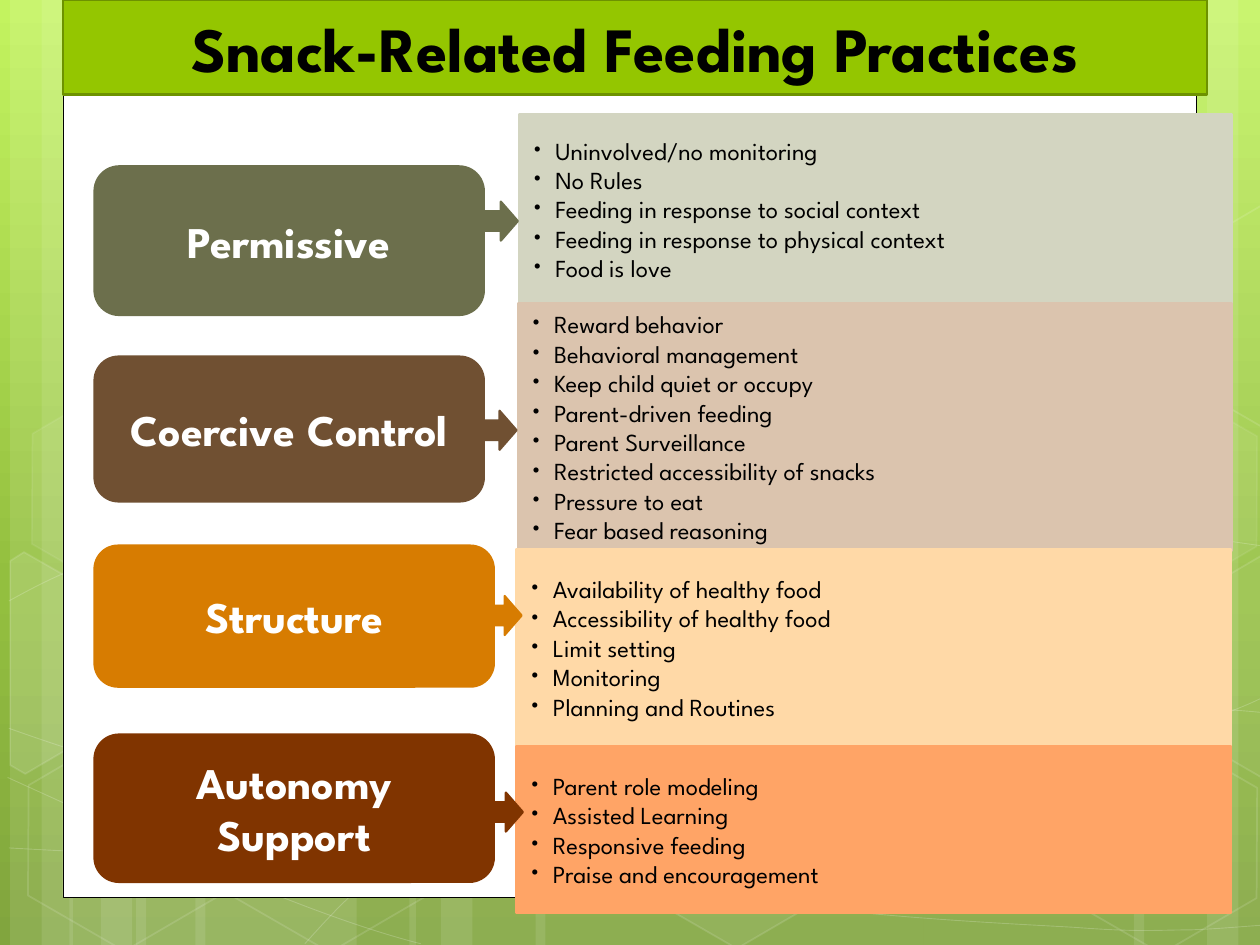
import copy
import dataclasses
import math

import pptx
import pptx.dml.color
import pptx.enum.shapes
import pptx.enum.text
import pptx.oxml.ns
import pptx.util
from pptx.util import Inches

SHAPE = pptx.enum.shapes.MSO_SHAPE
ALIGN = pptx.enum.text.PP_ALIGN
ANCHOR = pptx.enum.text.MSO_ANCHOR
qn = pptx.oxml.ns.qn


@dataclasses.dataclass(frozen=True)
class Theme:
    font: str = "League Spartan"
    white: str = "FFFFFF"
    black: str = "000000"
    banner: str = "94C600"
    banner_edge: str = "6D9200"
    backdrop: tuple = ((0, "C3F35F"), (0.62, "93BF3F"), (1, "81A53E"))
    title_size: int = 36
    label_size: int = 25
    item_size: int = 14
    edge: float = 1.25
    tilt: int = 30


THEME = Theme()

# Label, dark and light colour, label box, arrow position, list box, items
PRACTICES = [
    ("Permissive", "6C6F4C", "D3D5C1",
     (0.75, 1.32, 3.09, 1.18), (3.84, 1.6), (4.12, 0.91, 5.66, 1.5),
     ["Uninvolved/no monitoring", "No Rules", "Feeding in response to social context",
      "Feeding in response to physical context", "Food is love"]),
    ("Coercive Control", "705032", "DBC4AE",
     (0.75, 2.83, 3.09, 1.15), (3.83, 3.26), (4.11, 2.41, 5.67, 1.96),
     ["Reward behavior", "Behavioral management", "Keep child quiet or occupy",
      "Parent-driven feeding", "Parent Surveillance",
      "Restricted accessibility of snacks", "Pressure to eat", "Fear based reasoning"]),
    ("Structure", "D77C01", "FFD9A7",
     (0.75, 4.33, 3.17, 1.12), (3.87, 4.73), (4.1, 4.36, 5.67, 1.56),
     ["Availability of healthy food", "Accessibility of healthy food",
      "Limit setting", "Monitoring", "Planning and Routines"]),
    ("Autonomy Support", "803400", "FFA466",
     (0.75, 5.83, 3.17, 1.17), (3.88, 6.29), (4.1, 5.92, 5.67, 1.33),
     ["Parent role modeling", "Assisted Learning", "Responsive feeding",
      "Praise and encouragement"]),
]

# Left and width of each full-height light stripe
STRIPES = [(1.08, 1.75), (0.08, 0.5), (0.33, 0.83), (1.55, 1.75), (0.55, 0.5),
           (0.8, 0.83), (7.33, 1.75), (9.58, 0.5), (9, 0.83), (4.25, 3.08),
           (3.25, 0.5), (3.5, 0.83)]

# Start point, then two control points and an end point for each segment
CURVES = [
    [(0.07, 6.73), (0.61, 6.76), (1.15, 6.79), (1.9, 6.78), (2.65, 6.77), (3.58, 6.75),
     (4.58, 6.65), (5.58, 6.55), (7, 6.36), (7.92, 6.17), (8.83, 5.98), (9.77, 5.68),
     (10.07, 5.51)],
    [(0.07, 4.77), (0.36, 4.61), (0.65, 4.46), (1.21, 4.31), (1.78, 4.16), (2.59, 3.94),
     (3.47, 3.87), (4.36, 3.8), (5.44, 3.79), (6.54, 3.87), (7.64, 3.95), (9.47, 4.26),
     (10.07, 4.34)],
    [(0.06, 6.17), (1.27, 6.72), (2.47, 7.27), (3.34, 7.49)],
    [(0.07, 5.78), (0.38, 5.89), (0.7, 6), (1.28, 6.16), (1.86, 6.31), (2.73, 6.56),
     (3.57, 6.73), (4.4, 6.9), (5.45, 7.08), (6.28, 7.18), (7.11, 7.29), (8, 7.33),
     (8.53, 7.36), (9.05, 7.4), (9.19, 7.38), (9.45, 7.38), (9.71, 7.37), (9.89, 7.35),
     (10.07, 7.34)],
    [(2.42, 7.49), (2.6, 7.29), (2.78, 7.09), (3.02, 6.91), (3.26, 6.73), (3.6, 6.53),
     (3.88, 6.39), (4.16, 6.25), (4.33, 6.19), (4.7, 6.09), (5.06, 5.99), (5.73, 5.85),
     (6.08, 5.78), (6.44, 5.71), (6.49, 5.71), (6.8, 5.69), (7.11, 5.66), (7.6, 5.63),
     (7.94, 5.62), (8.29, 5.61), (8.86, 5.62), (8.86, 5.62), (9.08, 5.62), (9.31, 5.62),
     (9.53, 5.62), (9.71, 5.63), (9.88, 5.64), (10.06, 5.66)],
]

# Left, top, fill opacity and line opacity in percent
HEXAGONS = [(3.34, 0.36, 4, 8), (4.97, 5.89, 6, 12), (0.11, 5.91, 0, 12),
            (0.14, 3.12, 7, 8), (1.74, 5.92, 0, 12), (7.53, 4.53, 10, 12),
            (8.34, 5.93, 0, 12), (8.34, 3.14, 7, 8)]

# Corners, centre and fill opacity of the hexagons cut by the slide edge
CUT_HEXAGONS = [
    ([(0.08, 4.45), (0.19, 4.38), (0.96, 4.82), (0.95, 5.7), (0.2, 6.14), (0.08, 6.07)],
     (0.36, 5.35), 10),
    ([(9.26, 4.85), (10.01, 4.41), (10.09, 4.46), (10.09, 6.13), (10.02, 6.17),
      (9.26, 5.73)], (9.85, 5.2), 4),
    ([(9.26, 2.07), (10.01, 1.63), (10.1, 1.68), (10.09, 3.35), (10.02, 3.39),
      (9.26, 2.95)], (9.85, 2.41), 0),
]


def apply(target, formats):
    for name, value in formats.items():
        setattr(target, name, value)


def paint(fill, color, opacity=100):
    """Fill with a colour, or with nothing when it is fully transparent."""
    if not opacity:
        fill.background()
        return
    fill.solid()
    fill.fore_color.rgb = pptx.dml.color.RGBColor.from_string(color)
    if opacity < 100:
        for node in fill._xPr.iter(qn("a:srgbClr")):
            if node.getparent().getparent() is fill._xPr:
                alpha = node.makeelement(qn("a:alpha"), {"val": str(opacity * 1000)})
                node.append(alpha)


def style(shape, fill, line=None, width=0, fill_opacity=100, line_opacity=100):
    shape.shadow.inherit = False
    paint(shape.fill, fill, fill_opacity)
    paint(shape.line.fill, line, line_opacity if line else 0)
    if line:
        shape.line.width = pptx.util.Pt(width)


def add_box(slide, kind, area, *look):
    box = slide.shapes.add_shape(kind, *map(Inches, area))
    style(box, *look)
    return box


def add_outline(slide, points, closed, *look):
    points = [tuple(map(Inches, point)) for point in points]
    builder = slide.shapes.build_freeform(*points[0])
    builder.add_line_segments(points[1:], close=closed)
    outline = builder.convert_to_shape()
    style(outline, *look)
    return outline


def bend(outline):
    """Turn each three line segments into one cubic curve."""
    lines = list(outline._element.iter(qn("a:lnTo")))
    for start in range(0, len(lines), 3):
        curve = lines[start].makeelement(qn("a:cubicBezTo"), {})
        lines[start].addprevious(curve)
        for line in lines[start:start + 3]:
            curve.append(line[0])
            line.getparent().remove(line)


def turn(point, center, degrees):
    angle = math.radians(degrees)
    x, y = point[0] - center[0], point[1] - center[1]
    return (center[0] + x * math.cos(angle) - y * math.sin(angle),
            center[1] + x * math.sin(angle) + y * math.cos(angle))


def write(box, lines, size, color, bold=False, align=ALIGN.CENTER, bullet=False, inset=0.1):
    frame = box.text_frame
    apply(frame, {"word_wrap": True, "vertical_anchor": ANCHOR.MIDDLE,
                  "auto_size": pptx.enum.text.MSO_AUTO_SIZE.NONE,
                  "margin_left": Inches(inset), "margin_right": Inches(inset)})
    for index, line in enumerate(lines):
        para = frame.add_paragraph() if index else frame.paragraphs[0]
        para.alignment = align
        span = para.add_run()
        span.text = line
        apply(span.font, {"name": THEME.font, "size": pptx.util.Pt(size), "bold": bold})
        span.font.color.rgb = pptx.dml.color.RGBColor.from_string(color)
        if bullet:
            props = para._p.get_or_add_pPr()
            props.set("marL", str(Inches(0.19)))
            props.set("indent", str(Inches(-0.19)))
            props.append(props.makeelement(qn("a:buFont"), {"typeface": THEME.font}))
            props.append(props.makeelement(qn("a:buChar"), {"char": "•"}))


def add_backdrop(slide):
    fill = slide.background.fill
    fill.gradient()
    fill.gradient_angle = 270
    stop_list = next(slide._element.iter(qn("a:gsLst")))
    stop_list.append(copy.deepcopy(stop_list[0]))
    for stop, (position, color) in zip(fill.gradient_stops, THEME.backdrop):
        stop.position = position
        stop.color.rgb = pptx.dml.color.RGBColor.from_string(color)

    white = THEME.white
    for left, width in STRIPES:
        add_box(slide, SHAPE.RECTANGLE, (left, 0, width, 7.5), white, None, 0, 10)
    for nodes in CURVES:
        bend(add_outline(slide, nodes, False, white, white, 0.5, 0, 20))
    for left, top, inner, outer in HEXAGONS:
        hexagon = add_box(slide, SHAPE.HEXAGON, (left, top, 1.75, 1.52),
                          white, white, 1, inner, outer)
        hexagon.rotation = THEME.tilt
        hexagon.adjustments[0] = 0.285
    for corners, center, inner in CUT_HEXAGONS:
        upright = [turn(corner, center, -THEME.tilt) for corner in corners]
        add_outline(slide, upright, True, white, white, 1, inner, 12).rotation = THEME.tilt


def add_practice(slide, label, dark, light, label_area, arrow_at, list_area, items):
    name_box = add_box(slide, SHAPE.ROUNDED_RECTANGLE, label_area, dark, dark, THEME.edge)
    write(name_box, [label], THEME.label_size, THEME.white, bold=True, inset=0.15)
    list_box = add_box(slide, SHAPE.RECTANGLE, list_area, light, light, THEME.edge)
    write(list_box, items, THEME.item_size, THEME.black, align=ALIGN.LEFT, bullet=True)
    add_box(slide, SHAPE.RIGHT_ARROW, (*arrow_at, 0.27, 0.31), dark, dark, THEME.edge)


def add_title(slide, text):
    title = slide.shapes.title
    apply(title, dict(zip(("left", "top", "width", "height"),
                          map(Inches, (0.5, 0, 9.08, 0.75)))))
    style(title, THEME.banner, THEME.banner_edge, THEME.edge)
    write(title, [text], THEME.title_size, THEME.black, bold=True)
    slide.shapes._spTree.append(title._element)  # bring to front


def main():
    deck = pptx.Presentation()
    apply(deck, {"slide_width": Inches(10), "slide_height": Inches(7.5)})
    page = deck.slides.add_slide(deck.slide_layouts[5])
    add_backdrop(page)
    # White content panel
    add_box(page, SHAPE.RECTANGLE, (0.5, 0.36, 9, 6.76), THEME.white, THEME.black, 0.5)
    for practice in PRACTICES:
        add_practice(page, *practice)
    add_title(page, "Snack-Related Feeding Practices")
    deck.save("out.pptx")


if __name__ == "__main__":
    main()
